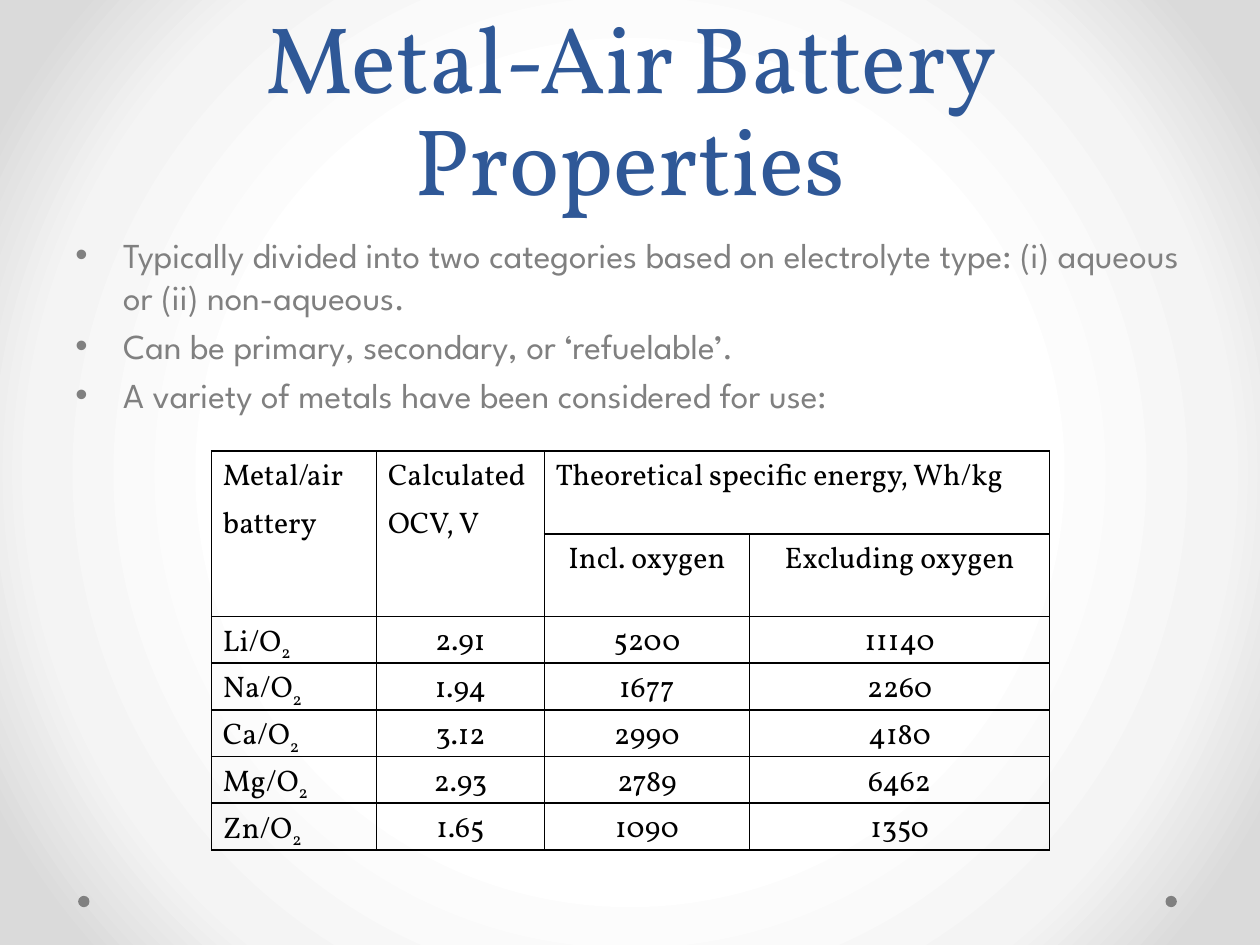
from typing import NamedTuple

import pptx
import pptx.dml.color
import pptx.enum.shapes
import pptx.enum.text
import pptx.oxml
import pptx.oxml.ns
import pptx.util

W, H = 10, 7.5
COLORS = {"title": "2F5897", "body": "808080", "table": "000000"}
BACKDROP = {50: "FFFFFF", 76: "F4F4F4", 92: "DADADA"}
SERIF, SANS = "Vollkorn", "League Spartan"
NS = pptx.oxml.ns.nsdecls("a")
ALIGN = pptx.enum.text.PP_ALIGN
inch = pptx.util.Inches

BULLETS = [
    "Typically divided into two categories based on electrolyte type: (i) aqueous or (ii) non-aqueous.",
    "Can be primary, secondary, or ‘refuelable’.",
    "A variety of metals have been considered for use:",
]
COL_WIDTHS = [1.31, 1.33, 1.63, 2.38]
HEADER_HEIGHT, ROW_HEIGHT = 0.66, 0.32


class Battery(NamedTuple):
    metal: str
    ocv: str
    incl_oxygen: str
    excl_oxygen: str


class Header(NamedTuple):
    text: str
    row: int
    col: int
    row_span: int = 1
    col_span: int = 1
    align: ALIGN = ALIGN.JUSTIFY


BATTERIES = [
    Battery("Li", "2.91", "5200", "11140"),
    Battery("Na", "1.94", "1677", "2260"),
    Battery("Ca", "3.12", "2990", "4180"),
    Battery("Mg", "2.93", "2789", "6462"),
    Battery("Zn", "1.65", "1090", "1350"),
]
HEADERS = [
    Header("Metal/air battery", 0, 0, row_span=2),
    Header("Calculated OCV, V", 0, 1, row_span=2),
    Header("Theoretical specific energy, Wh/kg", 0, 2, col_span=2),
    Header("Incl. oxygen", 1, 2, align=ALIGN.CENTER),
    Header("Excluding oxygen", 1, 3, align=ALIGN.CENTER),
]


def rgb(name: str) -> pptx.dml.color.RGBColor:
    return pptx.dml.color.RGBColor.from_string(COLORS[name])


def set_font(p, name: str, size: float, color: str) -> None:
    p.font.name, p.font.size = name, pptx.util.Pt(size)
    p.font.color.rgb = rgb(color)


def paint_background(s) -> None:
    """Fill the slide with a gradient that spreads from its centre."""
    s.background.fill.gradient()
    old = s.background._cSld.find(".//" + pptx.oxml.ns.qn("a:gradFill"))
    stops = "".join(f'<a:gs pos="{pos * 1000}"><a:srgbClr val="{color}"/></a:gs>'
                    for pos, color in BACKDROP.items())
    old.getparent().replace(old, pptx.oxml.parse_xml(
        f'<a:gradFill {NS} rotWithShape="1"><a:gsLst>{stops}</a:gsLst><a:path path="circle">'
        '<a:fillToRect l="50000" t="50000" r="50000" b="50000"/></a:path></a:gradFill>'))


def add_dot(s, left: float) -> None:
    sp = s.shapes.add_shape(pptx.enum.shapes.MSO_SHAPE.OVAL,
                            inch(left), inch(7.11), inch(0.09), inch(0.09))
    sp.shadow.inherit = False
    sp.fill.solid()
    sp.fill.fore_color.rgb = rgb("body")
    sp.line.fill.background()


def set_title(s, text: str) -> None:
    sp = s.shapes.title
    sp.left, sp.top, sp.width, sp.height = inch(0.05 * W), 0, inch(0.9 * W), inch(1.75)
    tf = sp.text_frame
    tf.text = text
    tf.word_wrap = True
    tf.auto_size = pptx.enum.text.MSO_AUTO_SIZE.NONE
    tf.vertical_anchor = pptx.enum.text.MSO_ANCHOR.BOTTOM
    p = tf.paragraphs[0]
    p.alignment, p.line_spacing = ALIGN.CENTER, pptx.util.Pt(58)
    set_font(p, SERIF, 54, "title")


def add_bullets(s, lines: list[str]) -> None:
    sp = s.shapes.add_textbox(inch(0.05 * W), inch(0.24 * H), inch(0.9 * W), inch(0.66 * H))
    tf = sp.text_frame
    tf.word_wrap = True
    tf.text = "\n".join(lines)
    for p in tf.paragraphs:
        p.space_before = pptx.util.Pt(4)
        set_font(p, SANS, 20, "body")
        pPr = p._p.get_or_add_pPr()
        pPr.set("marL", str(inch(0.38)))
        pPr.set("indent", str(-inch(0.38)))
        bullet = [f'<a:buFont {NS} typeface="Arial"/>', f'<a:buChar {NS} char="•"/>']
        for i, xml in enumerate(bullet):
            pPr.insert(len(pPr) - 1, pptx.oxml.parse_xml(xml))


def style_cell(cell) -> None:
    """Give a cell its margins, no fill and thin black borders."""
    cell.margin_left = cell.margin_right = inch(0.09)
    cell.margin_top = cell.margin_bottom = 0
    cell.fill.background()
    tcPr = cell._tc.get_or_add_tcPr()
    for i, side in enumerate("LRTB"):
        tcPr.insert(i, pptx.oxml.parse_xml(
            f'<a:ln{side} {NS} w="12700"><a:solidFill><a:srgbClr val="{COLORS["table"]}"/>'
            f'</a:solidFill></a:ln{side}>'))
    set_font(cell.text_frame.paragraphs[0], SERIF, 17, "table")


def write_cell(cell, text: str, align: ALIGN, subscript: str = "") -> None:
    p = cell.text_frame.paragraphs[0]
    p.alignment, p.line_spacing = align, 1.15
    p.add_run().text = text
    if subscript:
        r = p.add_run()
        r.text = subscript
        r._r.get_or_add_rPr().set("baseline", "-25000")


def add_battery_table(s) -> None:
    heights = [HEADER_HEIGHT] + [ROW_HEIGHT] * (len(BATTERIES) + 1)
    table = s.shapes.add_table(len(heights), len(COL_WIDTHS), inch(1.68), inch(3.58),
                               inch(sum(COL_WIDTHS)), inch(sum(heights))).table
    table.first_row = table.horz_banding = False
    for column, width in zip(table.columns, COL_WIDTHS):
        column.width = inch(width)
    for row, height in zip(table.rows, heights):
        row.height = inch(height)
    for cell in table.iter_cells():
        style_cell(cell)
    for h in HEADERS:
        cell = table.cell(h.row, h.col)
        if h.row_span * h.col_span > 1:
            cell.merge(table.cell(h.row + h.row_span - 1, h.col + h.col_span - 1))
        write_cell(cell, h.text, h.align)
    for row, battery in enumerate(BATTERIES, start=2):
        write_cell(table.cell(row, 0), f"{battery.metal}/O", ALIGN.JUSTIFY, subscript="2")
        for col, value in enumerate(battery[1:], start=1):
            write_cell(table.cell(row, col), value, ALIGN.CENTER)


def main() -> None:
    prs = pptx.Presentation()
    prs.slide_width, prs.slide_height = inch(W), inch(H)
    s = prs.slides.add_slide(prs.slide_layouts[5])
    paint_background(s)
    for left in (9.25, 0.62):
        add_dot(s, left)
    set_title(s, "Metal-Air Battery Properties")
    add_bullets(s, BULLETS)
    add_battery_table(s)
    prs.save("out.pptx")


if __name__ == "__main__":
    main()
